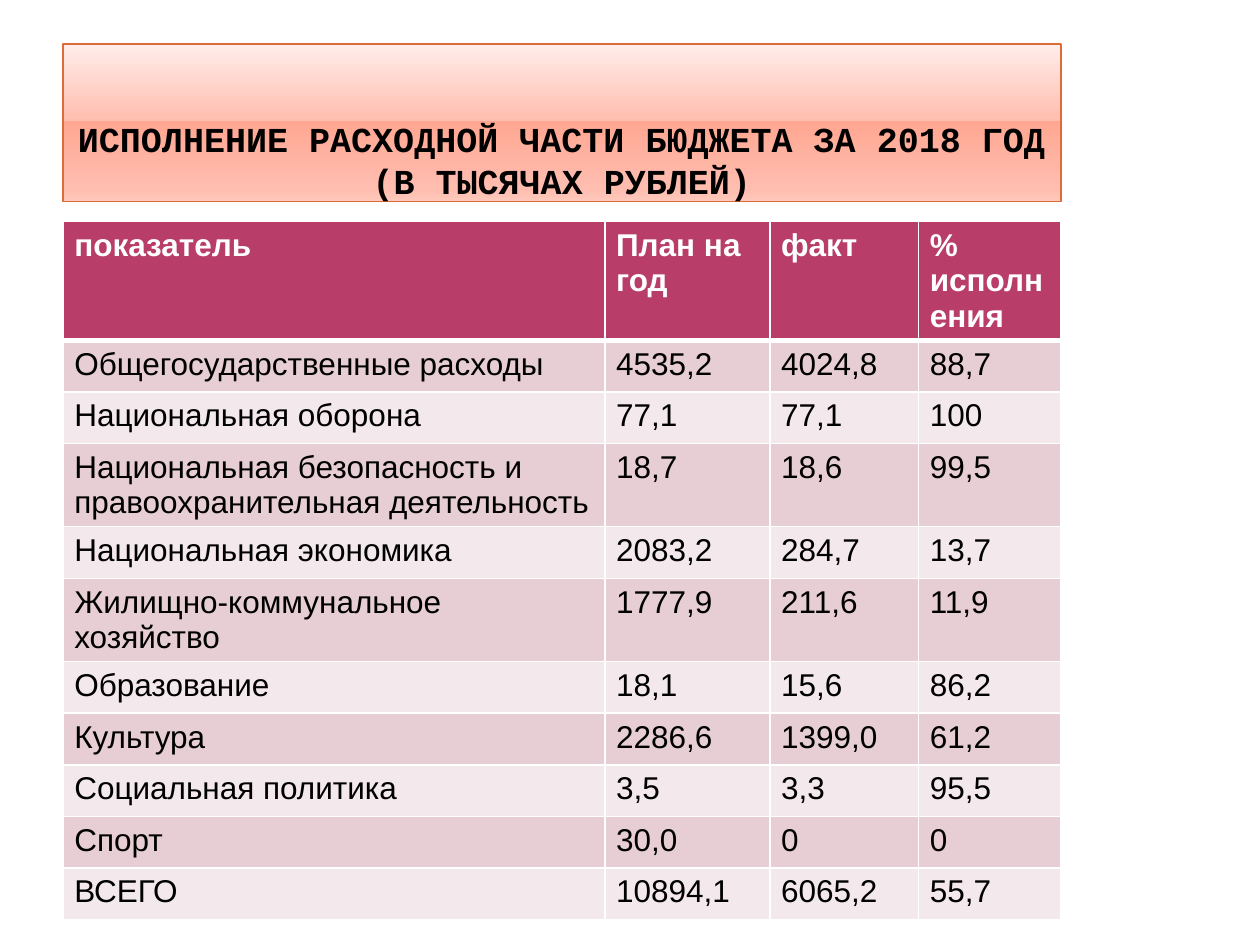
import pptx
import pptx.dml.color
import pptx.enum.shapes
import pptx.enum.text
import pptx.oxml.ns
import pptx.util
from lxml import etree

Inches = pptx.util.Inches
Pt = pptx.util.Pt
RGBColor = pptx.dml.color.RGBColor
qn = pptx.oxml.ns.qn

BLACK = RGBColor(0x00, 0x00, 0x00)
WHITE = RGBColor(0xFF, 0xFF, 0xFF)
ORANGE = RGBColor(0xDE, 0x6C, 0x36)
CRIMSON = RGBColor(0xB8, 0x3D, 0x68)
BANDS = (RGBColor(0xE6, 0xCE, 0xD4), RGBColor(0xF3, 0xE8, 0xEB))
PEACH = RGBColor(0xFF, 0xBD, 0xAF)
TITLE_STOPS = (
    (0, RGBColor(0xFF, 0xED, 0xEA)),
    (49, PEACH),
    (49, RGBColor(0xFF, 0xA7, 0x93)),
    (92, PEACH),
    (100, RGBColor(0xFF, 0xC8, 0xBC)),
)

TITLE = "ИСПОЛНЕНИЕ РАСХОДНОЙ ЧАСТИ БЮДЖЕТА ЗА 2018 ГОД (В ТЫСЯЧАХ РУБЛЕЙ)"
COLUMN_WIDTHS = (4.3, 1.31, 1.18, 1.13)
ROW_HEIGHT = 0.41
BUDGET = (
    ("показатель", "План на год", "факт", "% исполнения"),
    ("Общегосударственные расходы", "4535,2", "4024,8", "88,7"),
    ("Национальная оборона", "77,1", "77,1", "100"),
    ("Национальная безопасность и правоохранительная деятельность", "18,7", "18,6", "99,5"),
    ("Национальная экономика", "2083,2", "284,7", "13,7"),
    ("Жилищно-коммунальное хозяйство", "1777,9", "211,6", "11,9"),
    ("Образование", "18,1", "15,6", "86,2"),
    ("Культура", "2286,6", "1399,0", "61,2"),
    ("Социальная политика", "3,5", "3,3", "95,5"),
    ("Спорт", "30,0", "0", "0"),
    ("ВСЕГО", "10894,1", "6065,2", "55,7"),
)


def apply(target, values):
    """Set each named attribute of the target."""
    for name, value in values.items():
        setattr(target, name, value)


def write(para, text, color, **font):
    """Put one formatted span of text in a paragraph."""
    span = para.add_run()
    span.text = text
    apply(span.font, font)
    span.font.color.rgb = color


def fill_gradient(box, stops):
    """Fill a shape from top to bottom with the given colour stops."""
    box.fill.gradient()
    box.fill.gradient_angle = 270
    stop_list = next(box._element.iter(qn("a:gsLst")))
    stop_list.clear()
    for position, color in stops:
        stop = etree.SubElement(stop_list, qn("a:gs"), pos=str(position * 1000))
        etree.SubElement(stop, qn("a:srgbClr"), val=str(color))


def add_border(cell, side, width):
    """Draw one white border of a table cell."""
    line = etree.SubElement(cell._tc.get_or_add_tcPr(), qn(f"a:ln{side}"), w=str(Pt(width)))
    fill = etree.SubElement(line, qn("a:solidFill"))
    etree.SubElement(fill, qn("a:srgbClr"), val=str(WHITE))


def add_title(page, left, top, width, height):
    """Place the title panel in the given box."""
    box = page.shapes.add_shape(
        pptx.enum.shapes.MSO_SHAPE.RECTANGLE, left, top, width, height
    )
    box.shadow.inherit = False
    fill_gradient(box, TITLE_STOPS)
    box.line.color.rgb = ORANGE
    box.line.width = Pt(0.9)
    apply(box.text_frame, {
        "word_wrap": True,
        "vertical_anchor": pptx.enum.text.MSO_ANCHOR.BOTTOM,
        "margin_left": Inches(0.05),
        "margin_right": Inches(0.05),
        "margin_top": 0,
        "margin_bottom": 0,
    })
    para = box.text_frame.paragraphs[0]
    para.alignment = pptx.enum.text.PP_ALIGN.CENTER
    write(para, TITLE, BLACK, name="Courier New", size=Pt(20), bold=True)


def add_budget_table(page, left, top, width):
    """Place the budget table with a header and banded rows."""
    height = Inches(ROW_HEIGHT * len(BUDGET))
    table = page.shapes.add_table(
        len(BUDGET), len(COLUMN_WIDTHS), left, top, width, height
    ).table
    for column, share in zip(table.columns, COLUMN_WIDTHS):
        column.width = int(width * share / sum(COLUMN_WIDTHS))
    for index, (row, texts) in enumerate(zip(table.rows, BUDGET)):
        row.height = Inches(ROW_HEIGHT)
        header = index == 0
        borders = {"L": 1, "R": 1, "T": 3 if index == 1 else 1, "B": 3 if header else 1}
        for cell, text in zip(row.cells, texts):
            apply(cell, {
                "margin_left": Inches(0.09),
                "margin_right": Inches(0.09),
                "margin_top": Inches(0.05),
                "margin_bottom": Inches(0.05),
            })
            for side, thickness in borders.items():
                add_border(cell, side, thickness)
            cell.fill.solid()
            cell.fill.fore_color.rgb = CRIMSON if header else BANDS[(index - 1) % 2]
            write(cell.text_frame.paragraphs[0], text, WHITE if header else BLACK,
                  name="Arial", size=Pt(18), bold=header)


def main():
    """Build and save the deck."""
    deck = pptx.Presentation()
    apply(deck, {"slide_width": Inches(10), "slide_height": Inches(7.5)})
    page = deck.slides.add_slide(deck.slide_layouts[6])
    left, width = Inches(0.5), Inches(7.92)
    add_title(page, left, Inches(0.35), width, Inches(1.25))
    add_budget_table(page, left, Inches(1.76), width)
    deck.save("out.pptx")


if __name__ == "__main__":
    main()
